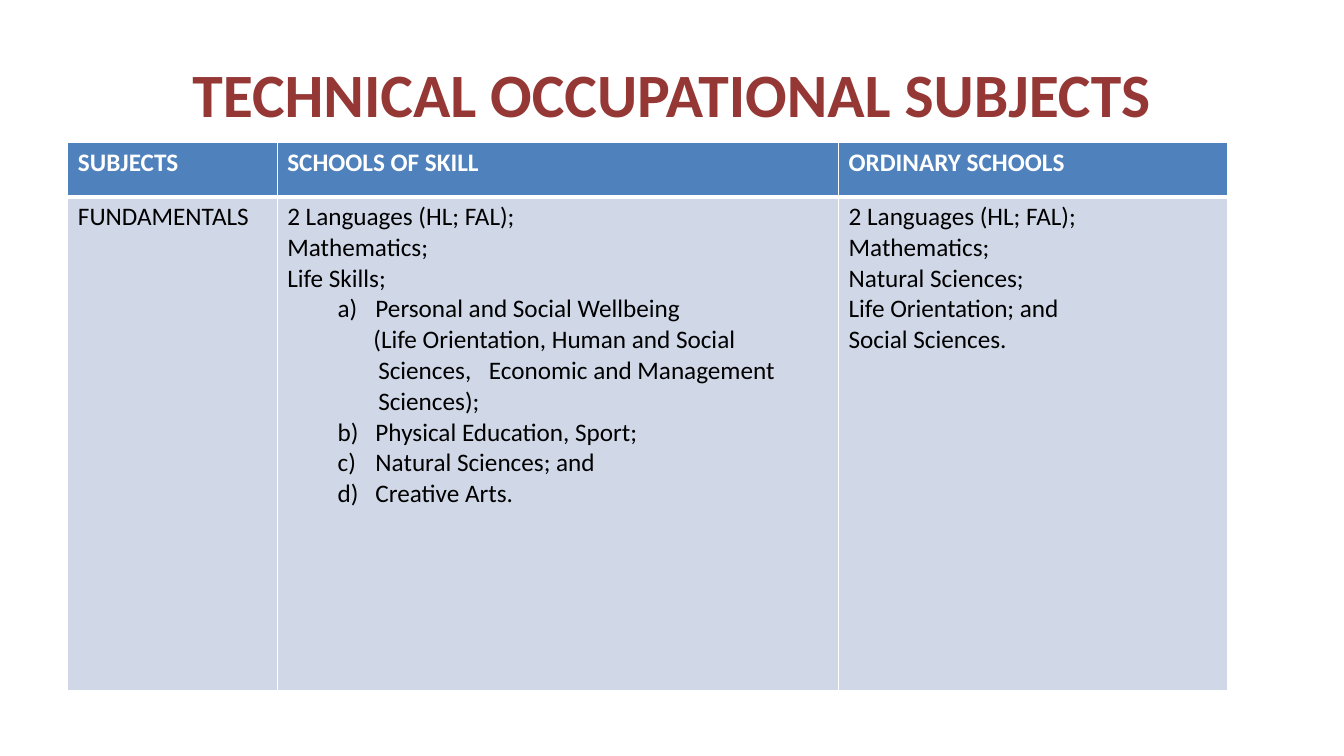
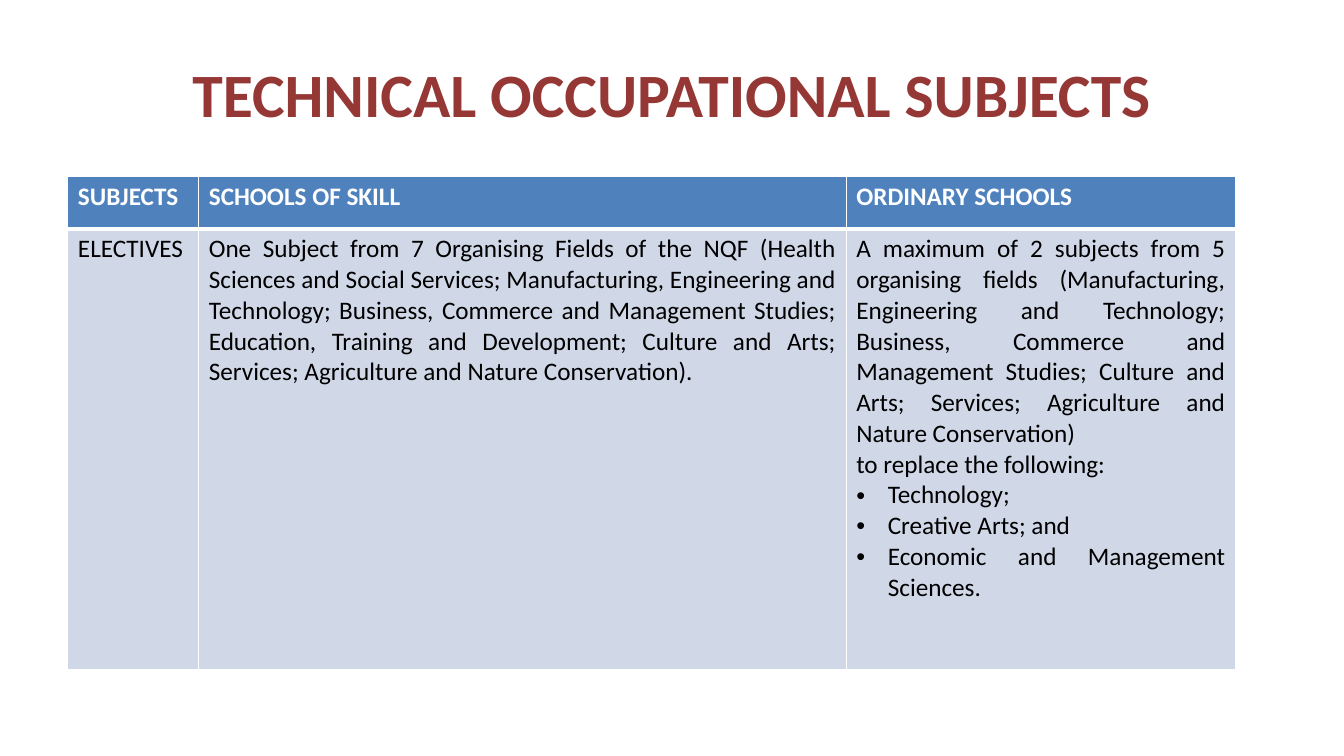
from dataclasses import dataclass

from lxml.etree import SubElement as Sub
from pptx import Presentation
from pptx.dml.color import RGBColor as Rgb
from pptx.enum.text import MSO_ANCHOR as Anchor, MSO_AUTO_SIZE as Fit, PP_ALIGN as Align
from pptx.oxml.ns import qn
from pptx.util import Pt


@dataclass(frozen=True)
class Theme:
    font: str = "Calibri"
    title: str = "953735"
    head: str = "4F81BD"
    body: str = "D0D8E8"
    white: str = "FFFFFF"
    ink: str = "000000"
    big: int = 44
    small: int = 18
    thin: int = 1
    thick: int = 3


THEME = Theme()
WIDE, HIGH = 960, 540
LEFT = 48.5
TITLE = "TECHNICAL OCCUPATIONAL SUBJECTS"
HEADS = ["SUBJECTS", "SCHOOLS OF SKILL", "ORDINARY SCHOOLS"]

STYLES = {
    "plain": {},
    "first": {"left": 63, "hang": -27, "start": 1},
    "next": {"left": 63, "hang": -27, "start": 2},
    "open": {"hang": 61.5},
    "inner": {"hang": 65, "tab": 151},
    "dot": {"left": 22.5, "hang": -22.5, "mark": "•"},
}

SLIDES = [
    {
        "top": 101.5,
        "cols": [149.5, 401, 278],
        "rows": [39, 352.5],
        "cells": [
            [("plain", "FUNDAMENTALS")],
            [
                ("plain", "2 Languages (HL; FAL);"),
                ("plain", "Mathematics;"),
                ("plain", "Life Skills;"),
                ("first", "Personal and Social Wellbeing"),
                ("open", "(Life Orientation, Human and Social"),
                ("inner", "Sciences,\tEconomic and Management"),
                ("inner", "Sciences);"),
                ("next", "Physical Education, Sport;"),
                ("next", "Natural Sciences; and"),
                ("next", "Creative Arts."),
            ],
            [
                ("plain", "2 Languages (HL; FAL);"),
                ("plain", "Mathematics;"),
                ("plain", "Natural Sciences;"),
                ("plain", "Life Orientation; and"),
                ("plain", "Social Sciences."),
            ],
        ],
    },
    {
        "top": 126,
        "cols": [93.5, 462.5, 278],
        "rows": [37.5, 314.5],
        "cells": [
            [("plain", "ELECTIVES")],
            [
                ("plain", "One Subject from 7 Organising Fields of the NQF (Health "
                 "Sciences and Social Services; Manufacturing, Engineering and "
                 "Technology; Business, Commerce and Management Studies; "
                 "Education, Training and Development; Culture and Arts; "
                 "Services; Agriculture and Nature Conservation)."),
            ],
            [
                ("plain", "A maximum of 2 subjects from 5 organising fields "
                 "(Manufacturing, Engineering and Technology; Business, Commerce "
                 "and Management Studies; Culture and Arts; Services; "
                 "Agriculture and Nature Conservation)"),
                ("plain", "to replace the following:"),
                ("dot", "Technology;"),
                ("dot", "Creative Arts; and"),
                ("dot", "Economic and Management Sciences."),
            ],
        ],
    },
]


def format_runs(para, size, color, bold):
    for run in para.runs:
        font = run.font
        font.name, font.size, font.bold = THEME.font, Pt(size), bold
        font.color.rgb = Rgb.from_string(color)


def indent(para, left=0, hang=0, start=None, mark=None, tab=None):
    props = para._p.get_or_add_pPr()
    props.set("marL", str(Pt(left)))
    props.set("indent", str(Pt(hang)))
    if start:
        auto = Sub(props, qn("a:buAutoNum"), type="alphaLcParenR")
        if start > 1:
            auto.set("startAt", str(start))
    elif mark:
        Sub(props, qn("a:buFont"), typeface="Arial")
        Sub(props, qn("a:buChar"), char=mark)
    if tab:
        stops = Sub(props, qn("a:tabLst"))
        Sub(stops, qn("a:tab"), pos=str(Pt(tab)), algn="l")


def edge(cell, widths):
    props = cell._tc.get_or_add_tcPr()
    for side, width in zip("LRTB", widths):
        line = Sub(props, qn(f"a:ln{side}"), w=str(Pt(width)))
        fill = Sub(line, qn("a:solidFill"))
        Sub(fill, qn("a:srgbClr"), val=THEME.white)


def fill_cell(cell, items, head):
    thin, thick = THEME.thin, THEME.thick
    edge(cell, (thin, thin, thin, thick) if head else (thin, thin, thick, thin))
    cell.fill.solid()
    cell.fill.fore_color.rgb = Rgb.from_string(THEME.head if head else THEME.body)
    frame = cell.text_frame
    frame.text = "\n".join(text for _, text in items)
    for para, (style, _) in zip(frame.paragraphs, items):
        para.alignment = Align.LEFT if head else Align.JUSTIFY
        indent(para, **STYLES[style])
        format_runs(para, THEME.small, THEME.white if head else THEME.ink, head)


def add_title(slide):
    title = slide.shapes.title
    title.left, title.top, title.width, title.height = Pt(48), Pt(21.5), Pt(864), Pt(90)
    frame = title.text_frame
    frame.text = TITLE
    frame.auto_size = Fit.NONE
    frame.word_wrap = True
    frame.vertical_anchor = Anchor.MIDDLE
    para = frame.paragraphs[0]
    para.alignment = Align.CENTER
    format_runs(para, THEME.big, THEME.title, True)


def add_grid(slide, data):
    cols, rows = data["cols"], data["rows"]
    grid = slide.shapes.add_table(
        len(rows), len(cols), Pt(LEFT), Pt(data["top"]), Pt(sum(cols)), Pt(sum(rows))
    ).table
    grid.horz_banding = False
    for col, width in zip(grid.columns, cols):
        col.width = Pt(width)
    for row, height in zip(grid.rows, rows):
        row.height = Pt(height)
    heads = [[("plain", text)] for text in HEADS]
    for r, line in enumerate((heads, data["cells"])):
        for c, items in enumerate(line):
            fill_cell(grid.cell(r, c), items, r == 0)


def main():
    deck = Presentation()
    deck.slide_width, deck.slide_height = Pt(WIDE), Pt(HIGH)
    for data in SLIDES:
        slide = deck.slides.add_slide(deck.slide_layouts[5])
        add_title(slide)
        add_grid(slide, data)
    deck.save("out.pptx")


if __name__ == "__main__":
    main()
